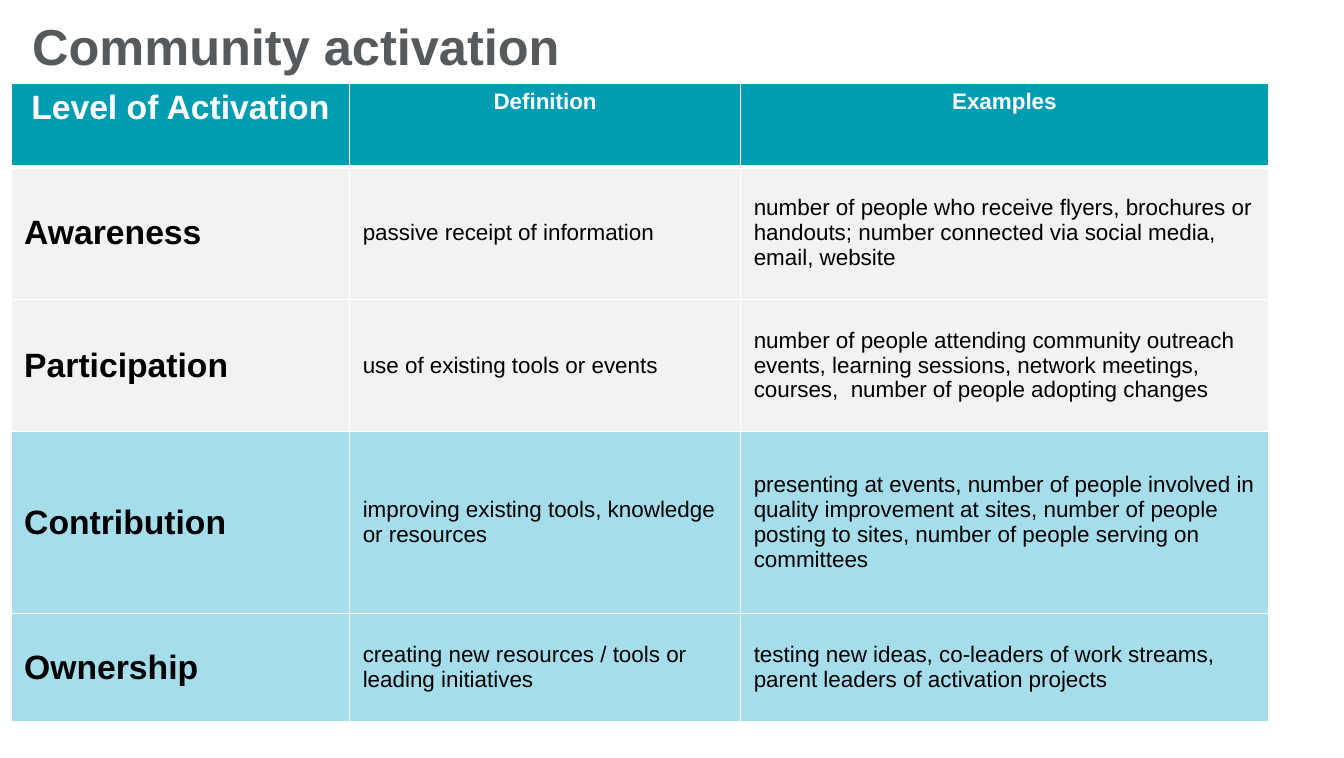
from dataclasses import dataclass

from lxml.etree import SubElement
from pptx import Presentation
from pptx.dml.color import RGBColor
from pptx.enum.text import MSO_ANCHOR as Anchor, PP_ALIGN as Align
from pptx.oxml.ns import qn
from pptx.slide import Slide
from pptx.table import _Cell as Cell
from pptx.text.text import _Paragraph as Paragraph
from pptx.util import Inches, Pt

FONT = "Arial"
WHITE = RGBColor(0xFF, 0xFF, 0xFF)
BLACK = RGBColor(0x00, 0x00, 0x00)
SLATE = RGBColor(0x56, 0x5A, 0x5C)
TEAL = RGBColor(0x00, 0x9C, 0xB1)
PALE_GREY = RGBColor(0xF2, 0xF2, 0xF2)
PALE_BLUE = RGBColor(0xA6, 0xDD, 0xEA)

COLUMN_WIDTHS = (3.35, 3.87, 5.22)
LEVEL_SIZE, DETAIL_SIZE = 24, 16
THIN, THICK = 1, 3


@dataclass(frozen=True)
class ActivationRow:
    level: str
    definition: str
    examples: str
    height: float
    fill: RGBColor


HEADER = ActivationRow("Level of Activation", "Definition", "Examples", 0.82, TEAL)
LEVELS = (
    ActivationRow(
        "Awareness",
        "passive receipt of information",
        "number of people who receive flyers, brochures or handouts; "
        "number connected via social media,  email, website",
        1.31, PALE_GREY),
    ActivationRow(
        "Participation",
        "use of existing tools or events",
        "number of people attending community outreach events, learning sessions, "
        "network meetings, courses,  number of people adopting changes",
        1.31, PALE_GREY),
    ActivationRow(
        "Contribution",
        "improving existing tools, knowledge or resources",
        "presenting at events, number of people involved in quality improvement "
        "at sites, number of people posting to sites, number of people serving "
        "on committees",
        1.8, PALE_BLUE),
    ActivationRow(
        "Ownership",
        "creating new resources / tools or leading initiatives",
        "testing new ideas, co-leaders of work streams, "
        "parent leaders of activation projects",
        1.07, PALE_BLUE),
)


def add_run(paragraph: Paragraph, text: str, size: int, color: RGBColor, bold: bool) -> None:
    run = paragraph.add_run()
    run.text = text
    run.font.name = FONT
    run.font.size = Pt(size)
    run.font.bold = bold
    run.font.color.rgb = color


def set_borders(cell: Cell, top: int, bottom: int) -> None:
    """Draw white cell edges, with widths in points."""
    properties = cell._tc.get_or_add_tcPr()
    edges = {"a:lnL": THIN, "a:lnR": THIN, "a:lnT": top, "a:lnB": bottom}
    for tag, width in edges.items():
        line = SubElement(properties, qn(tag), w=str(Pt(width)))
        fill = SubElement(line, qn("a:solidFill"))
        SubElement(fill, qn("a:srgbClr"), val=str(WHITE))


def fill_cell(cell: Cell, text: str, row: int, column: int, fill: RGBColor) -> None:
    is_header = row == 0
    is_level = column == 0
    set_borders(cell, THICK if row == 1 else THIN, THICK if is_header else THIN)
    cell.fill.solid()
    cell.fill.fore_color.rgb = fill
    cell.margin_left = cell.margin_right = Inches(0.13)
    cell.margin_top = cell.margin_bottom = Inches(0.05)
    cell.vertical_anchor = Anchor.TOP if is_header else Anchor.MIDDLE
    paragraph = cell.text_frame.paragraphs[0]
    paragraph.alignment = Align.CENTER if is_header else Align.LEFT
    add_run(paragraph, text, LEVEL_SIZE if is_level else DETAIL_SIZE,
            WHITE if is_header else BLACK, is_header or is_level)


def add_title(slide: Slide, text: str) -> None:
    title = slide.shapes.add_textbox(Inches(0.22), Inches(0.04), Inches(11.31), Inches(0.67))
    frame = title.text_frame
    frame.word_wrap = True
    frame.vertical_anchor = Anchor.TOP
    frame.margin_top, frame.margin_bottom = Inches(0.11), 0
    add_run(frame.paragraphs[0], text, 36, SLATE, True)


def add_activation_table(slide: Slide, rows: tuple[ActivationRow, ...]) -> None:
    table = slide.shapes.add_table(
        len(rows), len(COLUMN_WIDTHS), Inches(0.11), Inches(0.83),
        Inches(sum(COLUMN_WIDTHS)), Inches(sum(row.height for row in rows))).table
    table.horz_banding = False
    for column, width in zip(table.columns, COLUMN_WIDTHS):
        column.width = Inches(width)
    for r, row in enumerate(rows):
        table.rows[r].height = Inches(row.height)
        for c, text in enumerate((row.level, row.definition, row.examples)):
            fill_cell(table.cell(r, c), text, r, c, row.fill)


def main() -> None:
    deck = Presentation()
    deck.slide_width, deck.slide_height = Inches(13.3), Inches(7.5)
    slide = deck.slides.add_slide(deck.slide_layouts[6])

    # Heading
    add_title(slide, "Community activation")

    # Activation levels
    add_activation_table(slide, (HEADER, *LEVELS))

    deck.save("out.pptx")


if __name__ == "__main__":
    main()
